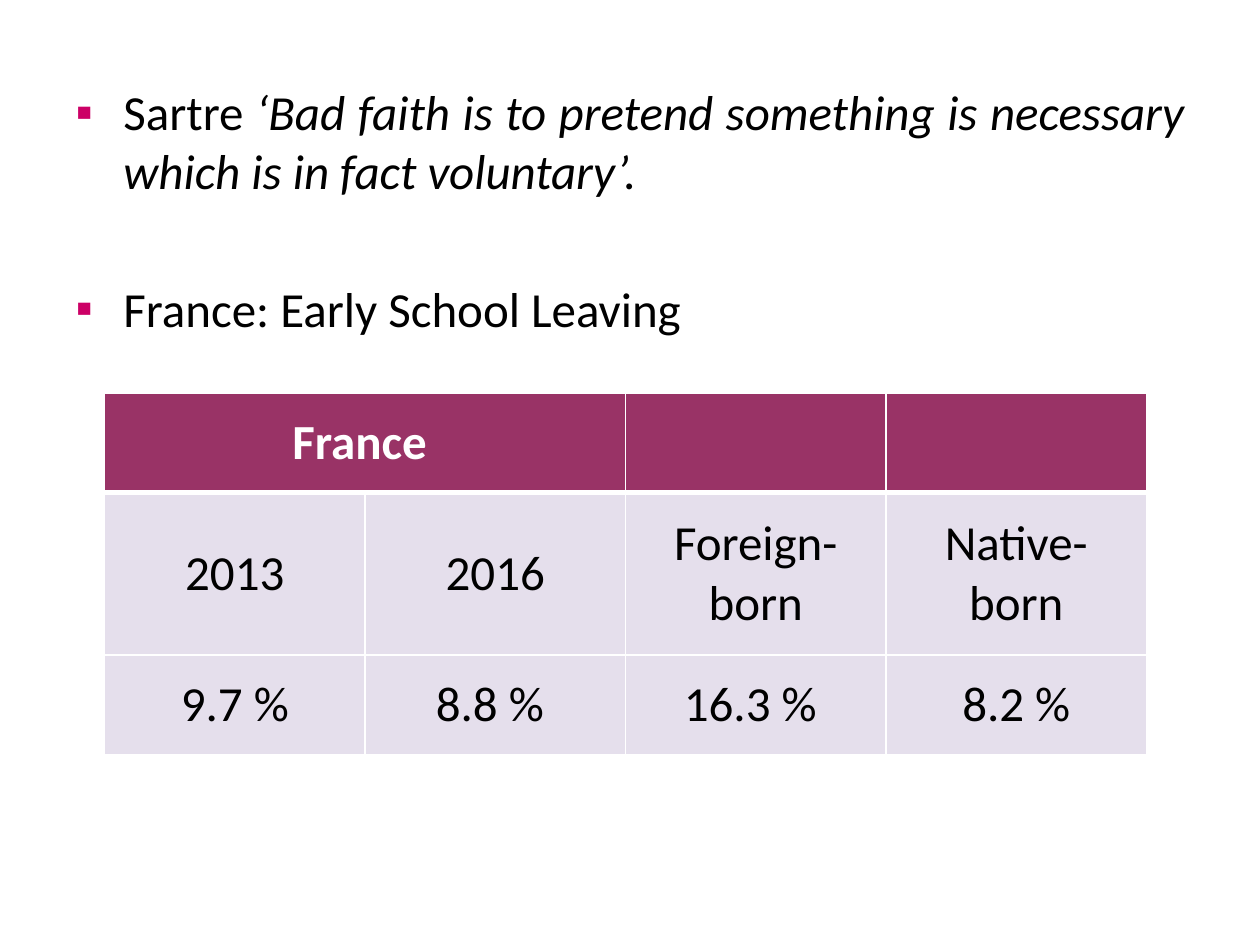
"""Build a slide with a quotation and a table of early school leaving in France."""
from lxml.etree import SubElement
from pptx import Presentation
from pptx.dml.color import RGBColor
from pptx.enum.text import MSO_ANCHOR, MSO_AUTO_SIZE, PP_ALIGN
from pptx.oxml.ns import qn
from pptx.util import Inches, Pt

BULLETS = [
    [("Sartre ", False),
     ("‘Bad faith is to pretend something is necessary which is in fact voluntary’.", True)],
    [("France: Early School Leaving ", False)],
]
ROWS = [
    ["France ", "", "", ""],
    ["2013", "2016", "Foreign-born", "Native-born"],
    ["9.7 %", "8.8 % ", "16.3 % ", "8.2 %"],
]
ROW_HEIGHTS = [0.79, 1.29, 0.79]
TABLE_LEFT, TABLE_TOP, TABLE_WIDTH = 0.83, 3.12, 8.27
PARAGRAPH_GAP = 45
HEADER_FILL, BODY_FILL = "993366", "E5DFEC"
BLACK, WHITE, PINK = "000000", "FFFFFF", "CC0066"


def color(value):
    return RGBColor.from_string(value)


def add_run(paragraph, text, font_color, bold=False, italic=False):
    run = paragraph.add_run()
    run.text = text
    font = run.font
    font.name, font.size = "Calibri", Pt(28)
    font.bold, font.italic = bold, italic
    font.color.rgb = color(font_color)


def add_bullet(paragraph):
    properties = paragraph._p.get_or_add_pPr()
    properties.set("marL", str(Inches(0.38)))
    properties.set("indent", str(-Inches(0.38)))
    bullet_color = SubElement(properties, qn("a:buClr"))
    SubElement(bullet_color, qn("a:srgbClr"), val=PINK)
    SubElement(properties, qn("a:buFont"), typeface="Arial")
    SubElement(properties, qn("a:buChar"), char="▪")


def add_borders(cell, top, bottom):
    properties = cell._tc.get_or_add_tcPr()
    for side, width in (("L", 1), ("R", 1), ("T", top), ("B", bottom)):
        line = SubElement(properties, qn(f"a:ln{side}"), w=str(Pt(width)))
        fill = SubElement(line, qn("a:solidFill"))
        SubElement(fill, qn("a:srgbClr"), val=WHITE)


def fill_body(body):
    body.left, body.top = Inches(0.5), Inches(0.6)
    body.width, body.height = Inches(9), Inches(5.83)
    frame = body.text_frame
    frame.word_wrap = True
    frame.auto_size = MSO_AUTO_SIZE.NONE
    for index, runs in enumerate(BULLETS):
        paragraph = frame.add_paragraph() if index else frame.paragraphs[0]
        paragraph.alignment = PP_ALIGN.JUSTIFY
        paragraph.space_before = Pt(PARAGRAPH_GAP if index else 0)
        add_bullet(paragraph)
        for text, italic in runs:
            add_run(paragraph, text, BLACK, italic=italic)


def add_leaving_table(slide):
    table = slide.shapes.add_table(
        len(ROWS), len(ROWS[0]), Inches(TABLE_LEFT), Inches(TABLE_TOP),
        Inches(TABLE_WIDTH), Inches(sum(ROW_HEIGHTS))).table
    for row_index, (texts, height) in enumerate(zip(ROWS, ROW_HEIGHTS)):
        header = row_index == 0
        table.rows[row_index].height = Inches(height)
        for column_index, text in enumerate(texts):
            cell = table.cell(row_index, column_index)
            add_borders(cell, 3 if row_index == 1 else 1, 3 if header else 1)
            cell.fill.solid()
            cell.fill.fore_color.rgb = color(HEADER_FILL if header else BODY_FILL)
            cell.vertical_anchor = MSO_ANCHOR.MIDDLE
            paragraph = cell.text_frame.paragraphs[0]
            paragraph.alignment = PP_ALIGN.CENTER
            if text:
                add_run(paragraph, text, WHITE if header else BLACK, bold=header)
    table.cell(0, 0).merge(table.cell(0, 1))


def main():
    presentation = Presentation()
    presentation.slide_width, presentation.slide_height = Inches(10), Inches(7.5)
    slide = presentation.slides.add_slide(presentation.slide_layouts[1])
    title = slide.shapes.title.element
    title.getparent().remove(title)
    fill_body(slide.placeholders[1])
    add_leaving_table(slide)
    presentation.save("out.pptx")


if __name__ == "__main__":
    main()
